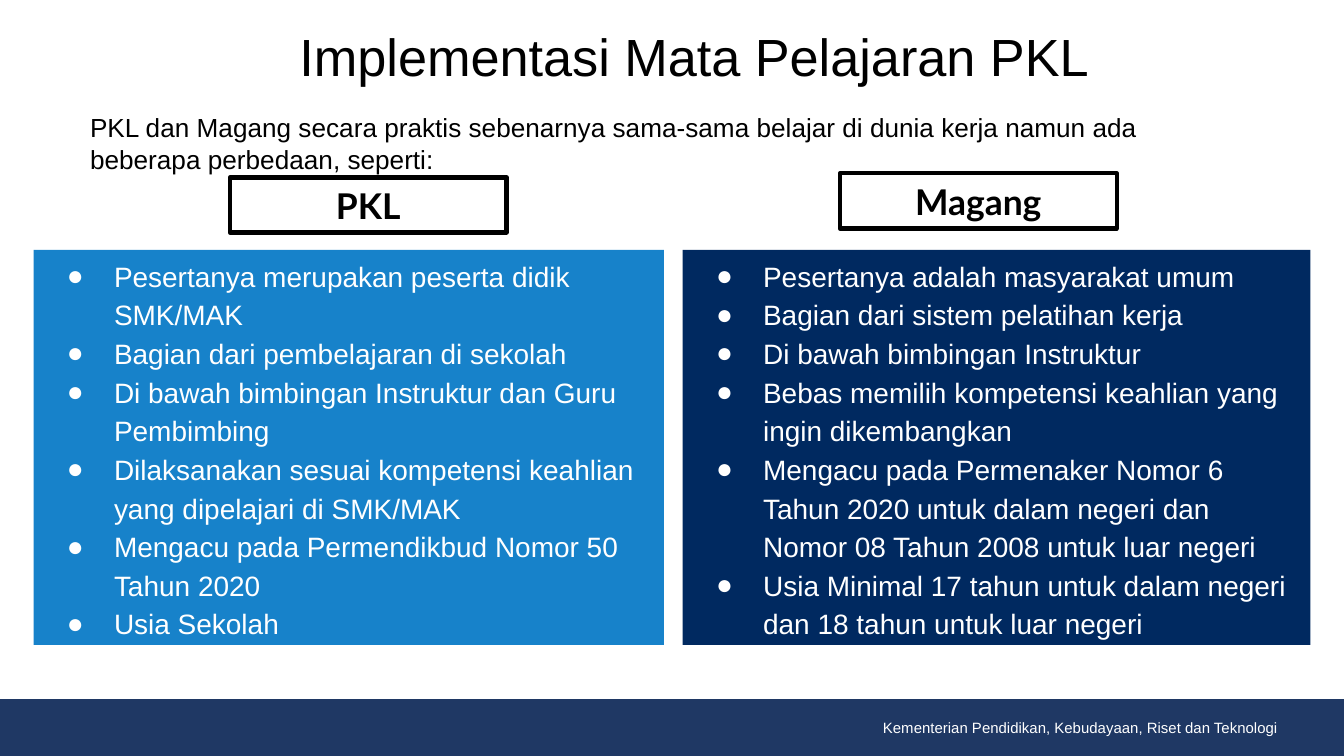
import pptx
import pptx.util
import pptx.dml.color
import pptx.enum.shapes
import pptx.enum.text
from dataclasses import dataclass
from lxml import etree

Inches = pptx.util.Inches
Pt = pptx.util.Pt
ALIGN = pptx.enum.text.PP_ALIGN
ANCHOR = pptx.enum.text.MSO_ANCHOR


@dataclass(frozen=True)
class Theme:
    black: str = "000000"
    white: str = "FFFFFF"
    footer: str = "1F3864"
    pkl: str = "1782CA"
    magang: str = "002960"
    body_font: str = "Arial"
    label_font: str = "Lato"
    title_size: int = 28
    label_size: int = 19
    list_size: int = 15
    intro_size: int = 14
    footer_size: int = 8


theme = Theme()
rgb = pptx.dml.color.RGBColor.from_string

deck = pptx.Presentation()
deck.slide_width, deck.slide_height = Inches(10), Inches(10 * 9 / 16)
slide = deck.slides.add_slide(deck.slide_layouts[6])


def add_rect(left, top, width, height, fill=None, line=None, weight=1):
    rect = slide.shapes.add_shape(
        pptx.enum.shapes.MSO_SHAPE.RECTANGLE,
        Inches(left), Inches(top), Inches(width), Inches(height))
    rect.shadow.inherit = False
    if fill:
        rect.fill.solid()
        rect.fill.fore_color.rgb = rgb(fill)
    else:
        rect.fill.background()
    if line:
        rect.line.color.rgb = rgb(line)
        rect.line.width = Pt(weight)
    else:
        rect.line.fill.background()
    return rect


def write(shape, text, size, color, font=theme.body_font, align=ALIGN.LEFT,
          anchor=ANCHOR.TOP, insets=(0.1, 0.1, 0.1, 0.1), bold=False, bullets=False):
    frame = shape.text_frame
    frame.word_wrap = True
    frame.vertical_anchor = anchor
    frame.margin_left, frame.margin_top, frame.margin_right, frame.margin_bottom = map(Inches, insets)
    frame.text = text
    for paragraph in frame.paragraphs:
        paragraph.alignment = align
        if bullets:
            paragraph.line_spacing = 1.15
            properties = paragraph._p.get_or_add_pPr()
            properties.set("marL", str(Inches(0.5)))
            properties.set("indent", str(Inches(-0.35)))
            bullet_color = etree.SubElement(properties, pptx.oxml.ns.qn("a:buClr"))
            etree.SubElement(bullet_color, pptx.oxml.ns.qn("a:srgbClr"), val=color)
            etree.SubElement(properties, pptx.oxml.ns.qn("a:buFont"), typeface=font)
            etree.SubElement(properties, pptx.oxml.ns.qn("a:buChar"), char="●")
        for run in paragraph.runs:
            run.font.name = font
            run.font.size = Pt(size)
            run.font.bold = bold
            run.font.color.rgb = rgb(color)


add_rect(0, 5.21, 10, 0.41, theme.footer, theme.footer)
ministry = slide.shapes.add_textbox(Inches(5.67), Inches(5.31), Inches(3.91), Inches(0.2))
write(ministry, "Kementerian Pendidikan, Kebudayaan, Riset dan Teknologi",
      theme.footer_size, theme.white, align=ALIGN.RIGHT, insets=(0.07, 0.04, 0.07, 0.04))

title = slide.shapes.add_textbox(Inches(2.13), Inches(0.08), Inches(8.44), Inches(0.63))
write(title, "Implementasi Mata Pelajaran PKL", theme.title_size, theme.black)

intro = slide.shapes.add_textbox(Inches(0.55), Inches(0.65), Inches(8.44), Inches(0.57))
write(intro, "PKL dan Magang secara praktis sebenarnya sama-sama belajar di dunia kerja "
      "namun ada beberapa perbedaan, seperti:",
      theme.intro_size, theme.black, insets=(0.12, 0.18, 0.1, 0))

programs = [
    ("PKL", 1.71, 1.32, 0.25, 4.69, theme.pkl, [
        "Pesertanya merupakan peserta didik SMK/MAK",
        "Bagian dari pembelajaran di sekolah",
        "Di bawah bimbingan Instruktur dan Guru Pembimbing",
        "Dilaksanakan sesuai kompetensi keahlian yang dipelajari di SMK/MAK",
        "Mengacu pada Permendikbud Nomor 50 Tahun 2020",
        "Usia Sekolah",
    ]),
    ("Magang", 6.25, 1.29, 5.08, 4.67, theme.magang, [
        "Pesertanya adalah masyarakat umum",
        "Bagian dari sistem pelatihan kerja",
        "Di bawah bimbingan Instruktur",
        "Bebas memilih kompetensi keahlian yang ingin dikembangkan",
        "Mengacu pada Permenaker Nomor 6 Tahun 2020 untuk dalam negeri dan "
        "Nomor 08 Tahun 2008 untuk luar negeri",
        "Usia Minimal 17 tahun untuk dalam negeri dan 18 tahun untuk luar negeri",
    ]),
]
for name, label_left, label_top, panel_left, panel_width, panel_fill, traits in programs:
    label = add_rect(label_left, label_top, 2.06, 0.41, line=theme.black, weight=2.25)
    write(label, name, theme.label_size, theme.black, font=theme.label_font,
          align=ALIGN.CENTER, anchor=ANCHOR.MIDDLE, bold=True)
    panel = add_rect(panel_left, 1.86, panel_width, 2.94, panel_fill)
    write(panel, "\n".join(traits), theme.list_size, theme.white,
          anchor=ANCHOR.MIDDLE, bullets=True)

deck.save("out.pptx")
